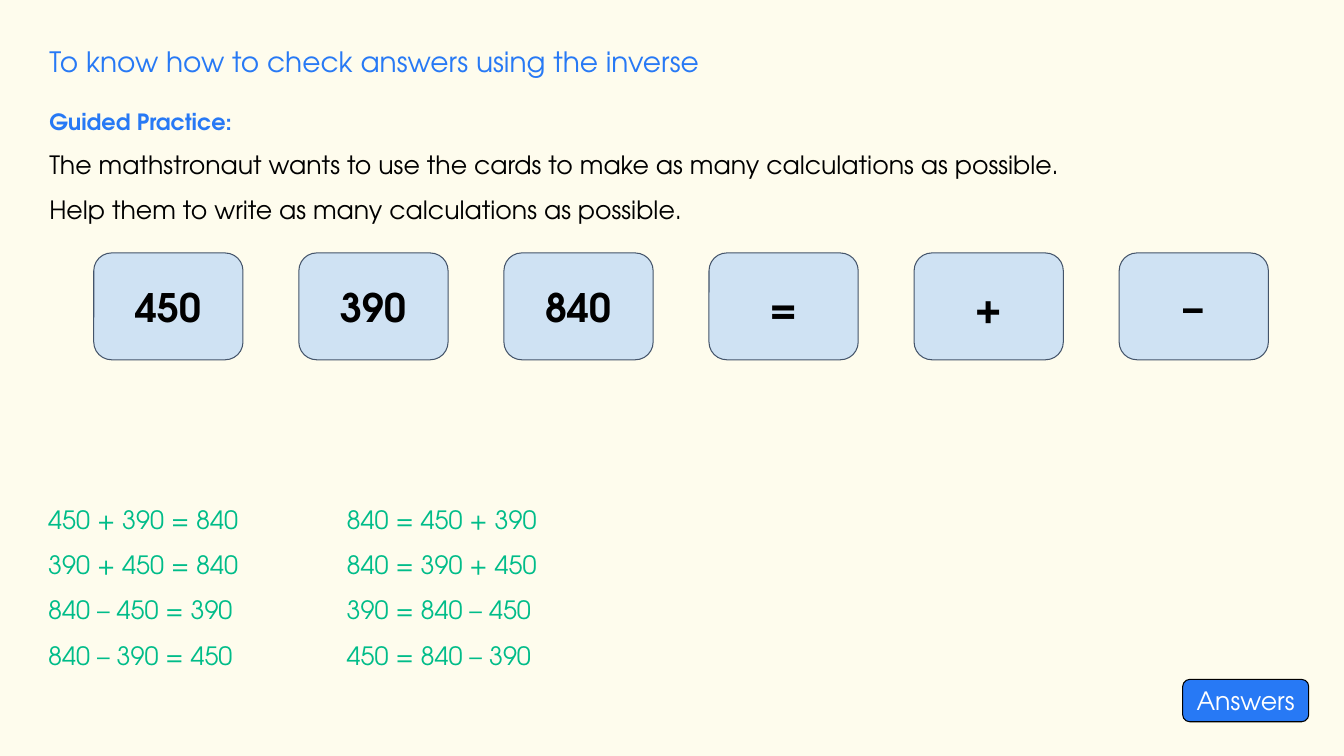
from pptx import Presentation
from pptx.dml.color import RGBColor
from pptx.enum.shapes import MSO_SHAPE
from pptx.enum.text import MSO_ANCHOR, MSO_AUTO_SIZE, PP_ALIGN
from pptx.util import Inches, Pt

FONT = "TeX Gyre Adventor"
COLORS = {
    "background": "FEFCED",
    "blue": "2779F5",
    "black": "000000",
    "white": "FFFFFF",
    "green": "00BC89",
    "card": "CFE2F3",
    "card_line": "44546A",
}
CARDS = ["450", "390", "840", "=", "+", "–"]
ANSWERS = [
    ["450 + 390 = 840", "390 + 450 = 840", "840 – 450 = 390", "840 – 390 = 450"],
    ["840 = 450 + 390", "840 = 390 + 450", "390 = 840 – 450", "450 = 840 – 390"],
]


def rgb(name):
    """Return the named colour."""
    return RGBColor.from_string(COLORS[name])


def write(sp, lines, size, color, bold=False, spacing=1.0,
          align=PP_ALIGN.LEFT, anchor=MSO_ANCHOR.TOP, pad=0.05):
    """Fill a shape with one formatted paragraph per line."""
    tf = sp.text_frame
    tf.word_wrap = True
    tf.auto_size = MSO_AUTO_SIZE.NONE
    tf.vertical_anchor = anchor
    tf.margin_left = tf.margin_right = Inches(0.1)
    tf.margin_top = tf.margin_bottom = Inches(pad)
    for i, line in enumerate(lines):
        p = tf.add_paragraph() if i else tf.paragraphs[0]
        p.alignment = align
        p.line_spacing = spacing
        r = p.add_run()
        r.text = line
        r.font.name = FONT
        r.font.size = Pt(size)
        r.font.bold = bold
        r.font.color.rgb = rgb(color)


def add_title(s, text):
    """Place and format the slide title."""
    sp = s.shapes.title
    sp.left, sp.top = Inches(0.39), Inches(0.39)
    sp.width, sp.height = Inches(12.02), Inches(0.44)
    write(sp, [text], 20, "blue")


def add_text(s, box, lines, size, color, **style):
    """Add a text box with one and a half line spacing."""
    sp = s.shapes.add_textbox(*[Inches(v) for v in box])
    write(sp, lines, size, color, spacing=1.5, **style)


def add_rounded(s, box, text, size, fill, line, color, bold=False):
    """Add a rounded rectangle with centred text."""
    sp = s.shapes.add_shape(MSO_SHAPE.ROUNDED_RECTANGLE, *[Inches(v) for v in box])
    sp.shadow.inherit = False
    sp.fill.solid()
    sp.fill.fore_color.rgb = rgb(fill)
    sp.line.color.rgb = rgb(line)
    sp.line.width = Pt(0.75)
    write(sp, [text], size, color, bold=bold,
          align=PP_ALIGN.CENTER, anchor=MSO_ANCHOR.MIDDLE)


def main():
    """Build the slide and save it."""
    prs = Presentation()
    prs.slide_width, prs.slide_height = Inches(13.33), Inches(7.5)
    s = prs.slides.add_slide(prs.slide_layouts[5])
    s.background.fill.solid()
    s.background.fill.fore_color.rgb = rgb("background")

    add_title(s, "To know how to check answers using the inverse")
    add_text(s, (0.39, 0.89, 6.85, 0.34), ["Guided Practice:"], 16, "blue", bold=True)
    add_text(s, (0.39, 1.28, 12.61, 0.88), [
        "The mathstronaut wants to use the cards to make as many calculations as possible.",
        "Help them to write as many calculations as possible.",
    ], 18, "black")
    for i, label in enumerate(CARDS):
        add_rounded(s, (0.93 + 2.034 * i, 2.51, 1.48, 1.06), label, 28,
                    "card", "card_line", "black", bold=True)
    for i, lines in enumerate(ANSWERS):
        add_text(s, (0.38 + 2.96 * i, 4.75, 2.96, 1.99), lines, 18, "green", pad=0.1)
    add_rounded(s, (11.73, 6.74, 1.25, 0.42), "Answers", 18, "blue", "black", "white")

    prs.save("out.pptx")


if __name__ == "__main__":
    main()
